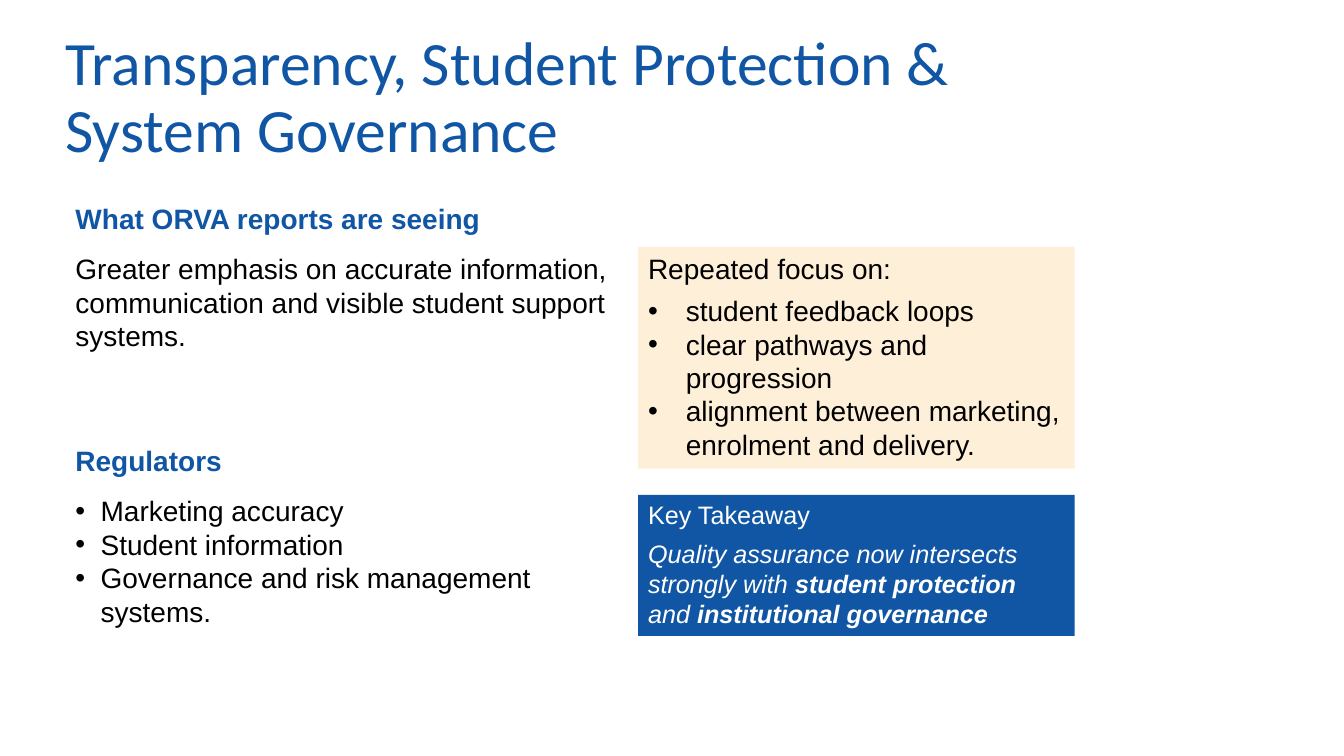
from dataclasses import dataclass

from lxml import etree
from pptx import Presentation
from pptx.dml.color import RGBColor
from pptx.enum.shapes import MSO_SHAPE
from pptx.enum.text import MSO_ANCHOR, PP_ALIGN
from pptx.oxml.ns import qn
from pptx.slide import Slide
from pptx.util import Pt

RECTANGLE = MSO_SHAPE.RECTANGLE
TOP, MIDDLE = MSO_ANCHOR.TOP, MSO_ANCHOR.MIDDLE
LEFT = PP_ALIGN.LEFT

BLUE, CREAM, BLACK, WHITE = "1056A4", "FEEFD9", "000000", "FFFFFF"
ARIAL_LINE = 1.195  # line pitch as a multiple of the text size


@dataclass(frozen=True)
class Run:
    text: str
    size: float = 20
    color: str = BLACK
    bold: bool = False
    italic: bool = False
    font: str = "Arial"


@dataclass(frozen=True)
class Block:
    """One paragraph; a line break in a run stays inside the paragraph."""
    runs: tuple[Run, ...]
    before: float = 0
    bullet_indent: float = 0
    line_spacing: float | None = None


@dataclass(frozen=True)
class Panel:
    left: float
    top: float
    width: float
    height: float
    blocks: tuple[Block, ...]
    fill: str | None = None
    anchor: MSO_ANCHOR = TOP


def rgb(color: str) -> RGBColor:
    return RGBColor.from_string(color)


def bullet_list(items: tuple[str, ...], indent: float, before: float) -> tuple[Block, ...]:
    return tuple(
        Block((Run(item),), before if index == 0 else 0, indent)
        for index, item in enumerate(items)
    )


def add_run(paragraph, run: Run) -> None:
    for index, line in enumerate(run.text.split("\n")):
        if index:
            paragraph.add_line_break()
        text_run = paragraph.add_run()
        text_run.text = line
        font = text_run.font
        font.name, font.size = run.font, Pt(run.size)
        font.bold, font.italic = run.bold, run.italic
        font.color.rgb = rgb(run.color)


def add_bullet(paragraph, indent: float) -> None:
    properties = paragraph._p.get_or_add_pPr()
    properties.set("marL", str(Pt(indent)))
    properties.set("indent", str(-Pt(indent)))
    etree.SubElement(properties, qn("a:buFont")).set("typeface", "Arial")
    etree.SubElement(properties, qn("a:buChar")).set("char", "•")


def draw_panel(slide: Slide, panel: Panel) -> None:
    box = (Pt(panel.left), Pt(panel.top), Pt(panel.width), Pt(panel.height))
    if panel.fill:
        shape = slide.shapes.add_shape(RECTANGLE, *box)
        shape.shadow.inherit = False
        shape.fill.solid()
        shape.fill.fore_color.rgb = rgb(panel.fill)
        shape.line.fill.background()
    else:
        shape = slide.shapes.add_textbox(*box)
    frame = shape.text_frame
    frame.word_wrap = True
    frame.vertical_anchor = panel.anchor
    for index, block in enumerate(panel.blocks):
        paragraph = frame.add_paragraph() if index else frame.paragraphs[0]
        if block.bullet_indent:
            add_bullet(paragraph, block.bullet_indent)
        paragraph.alignment = LEFT
        paragraph.line_spacing = block.line_spacing or Pt(block.runs[0].size * ARIAL_LINE)
        if block.before:
            paragraph.space_before = Pt(block.before)
        for run in block.runs:
            add_run(paragraph, run)


# Column geometry
LEFT_COLUMN, RIGHT_COLUMN, RIGHT_WIDTH = 46.8, 455.8, 311.8
HEADING_GAP, PANEL_GAP = 12, 6

TITLE = Panel(39.6, 18, 653, 105.8, (
    Block((Run("Transparency, Student Protection & System Governance",
               44, BLUE, font="Calibri"),), line_spacing=0.9),
), anchor=MIDDLE)

REPORTS = Panel(LEFT_COLUMN, 140.6, 699.8, 140.4, (
    Block((Run("What ORVA reports are seeing", color=BLUE, bold=True),)),
    Block((Run("Greater emphasis on accurate information,\n"
               "communication and visible student support\n"
               "systems."),), HEADING_GAP),
))

TAKEAWAY = Panel(RIGHT_COLUMN, 353.5, RIGHT_WIDTH, 100.8, (
    Block((Run("Key Takeaway", 18, WHITE),)),
    Block((
        Run("Quality assurance now intersects strongly with ", 18, WHITE, italic=True),
        Run("student protection", 18, WHITE, bold=True, italic=True),
        Run(" and ", 18, WHITE, italic=True),
        Run("institutional governance", 18, WHITE, bold=True, italic=True),
    ), PANEL_GAP),
), BLUE)

FOCUS = Panel(RIGHT_COLUMN, 176.4, RIGHT_WIDTH, 158.4, (
    Block((Run("Repeated focus on:"),)),
    *bullet_list((
        "student feedback loops",
        "clear pathways and progression",
        "alignment between marketing, enrolment and delivery.",
    ), 27, PANEL_GAP),
), CREAM)

REGULATORS = Panel(LEFT_COLUMN, 313.4, 398.9, 140.4, (
    Block((Run("Regulators", color=BLUE, bold=True),)),
    *bullet_list((
        "Marketing accuracy",
        "Student information",
        "Governance and risk management systems.",
    ), 18, HEADING_GAP),
))


def main() -> None:
    presentation = Presentation()
    presentation.slide_width, presentation.slide_height = Pt(960), Pt(540)
    slide = presentation.slides.add_slide(presentation.slide_layouts[6])
    for panel in (TITLE, REPORTS, TAKEAWAY, FOCUS, REGULATORS):
        draw_panel(slide, panel)
    presentation.save("out.pptx")


if __name__ == "__main__":
    main()
